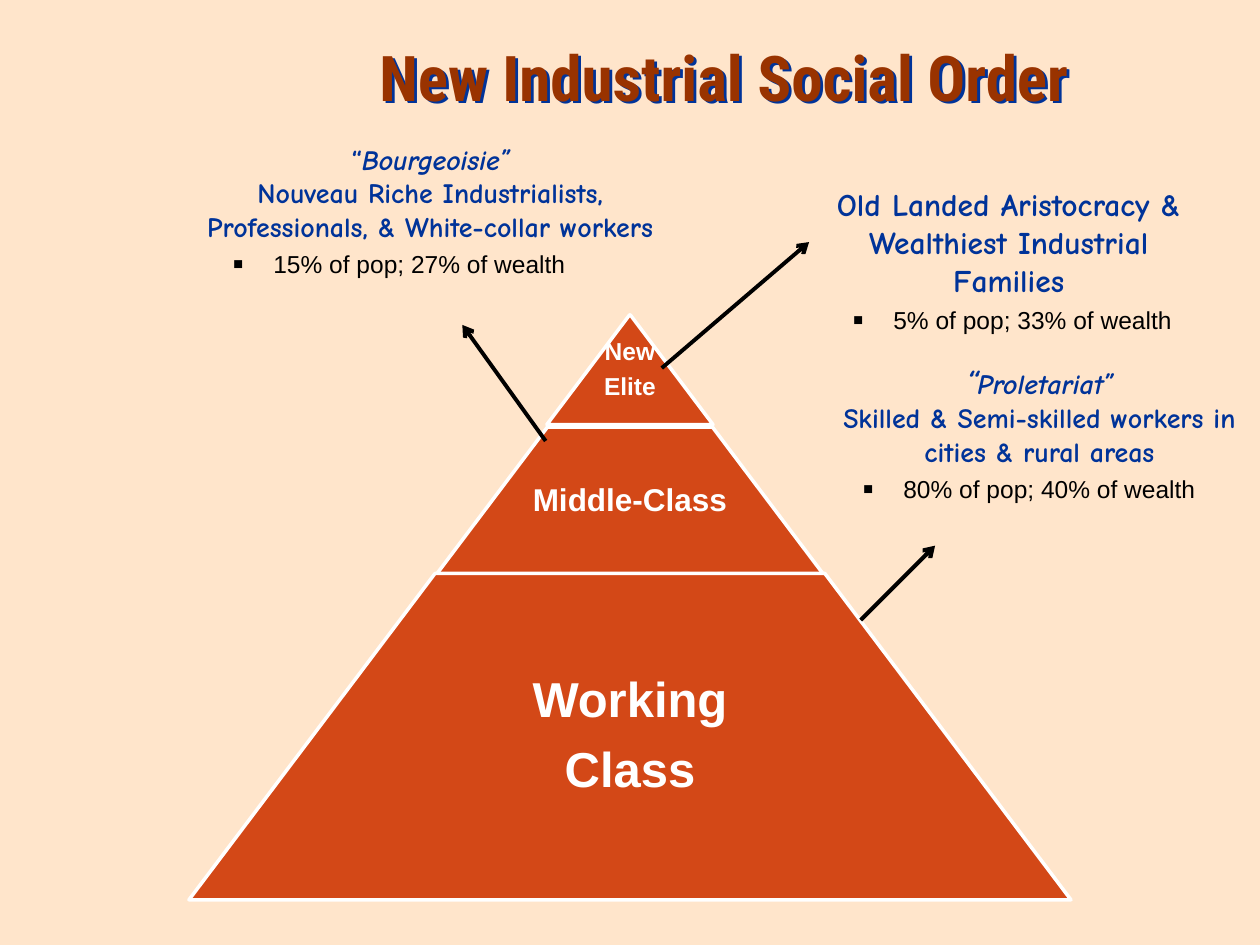
from lxml import etree
from pptx import Presentation
from pptx.dml.color import RGBColor
from pptx.enum.shapes import MSO_CONNECTOR, MSO_SHAPE
from pptx.enum.text import MSO_ANCHOR, MSO_AUTO_SIZE, PP_ALIGN
from pptx.oxml.ns import qn
from pptx.util import Cm, Pt

CENTER, LEFT = PP_ALIGN.CENTER, PP_ALIGN.LEFT
TOP, MIDDLE = MSO_ANCHOR.TOP, MSO_ANCHOR.MIDDLE
NO_FIT = MSO_AUTO_SIZE.NONE
TRAPEZOID = MSO_SHAPE.TRAPEZOID
STRAIGHT = MSO_CONNECTOR.STRAIGHT

COLORS = {
    "background": "FFE5CB",
    "title": "993300",
    "tier": "D34817",
    "white": "FFFFFF",
    "note": "003399",
    "black": "000000",
}
TITLE_FONT, NOTE_FONT, BODY_FONT = "Roboto Condensed", "Comic Neue", "Arial"
CENTER_X = 12.7

TIERS = [
    (6.35, 3.35, 2.21, 3.35, 0.05, 14, ["New", "Elite"]),
    (8.61, 7.85, 3.0, 5.11, 0.08, 18, ["Middle-Class"]),
    (11.56, 17.78, 6.58, 11.56, 0.1, 28, ["Working", "Class"]),
]

NOTES = [
    ((16.51, 7.19, 8.89, 3.84),
     [[("“", 18, True), ("Proletariat”", 16, True)],
      [("Skilled & Semi-skilled workers in cities & rural areas", 16, False)]],
     "80% of pop; 40% of wealth"),
    ((3.81, 2.74, 9.73, 3.76),
     [[("“", 16, False), ("Bourgeoisie”", 16, True)],
      [("Nouveau Riche Industrialists,", 16, False)],
      [("Professionals, & White-collar workers", 16, False)]],
     "15% of pop; 27% of wealth"),
    ((16.31, 3.61, 8.05, 3.33),
     [[("Old Landed Aristocracy & Wealthiest Industrial Families", 18, False)]],
     "5% of pop; 33% of wealth"),
]

ARROWS = [
    (13.34, 7.42, 16.31, 4.88),
    (11.0, 8.89, 9.32, 6.55),
    (17.35, 12.5, 18.85, 11.0),
]


def rgb(name):
    return RGBColor.from_string(COLORS[name])


def format_run(r, font, size, color, bold=False, italic=False):
    r.font.name = font
    r.font.size = Pt(size)
    r.font.color.rgb = rgb(color)
    r.font.bold = bold
    r.font.italic = italic


def next_paragraph(tf, index):
    return tf.add_paragraph() if index else tf.paragraphs[0]


def add_title(slide, text):
    sp = slide.shapes.title
    sp.left, sp.top, sp.width, sp.height = Cm(4.65), Cm(0.64), Cm(19.89), Cm(1.8)
    tf = sp.text_frame
    tf.text = text
    tf.auto_size = NO_FIT
    tf.vertical_anchor = TOP
    p = tf.paragraphs[0]
    p.alignment = CENTER
    format_run(p.runs[0], TITLE_FONT, 36, "title", bold=True)
    sp.fill.background()
    effects = etree.SubElement(sp.element.spPr, qn("a:effectLst"))
    shadow = etree.SubElement(effects, qn("a:outerShdw"), dist=str(Cm(0.08)),
                              dir="2700000", algn="ctr", rotWithShape="0")
    etree.SubElement(shadow, qn("a:srgbClr"), val=COLORS["note"])


def add_text_box(slide, left, top, width, height):
    sp = slide.shapes.add_textbox(Cm(left), Cm(top), Cm(width), Cm(height))
    sp.text_frame.word_wrap = True
    return sp.text_frame


def add_tier(slide, top, width, height, text_width, inset, size, lines):
    sp = slide.shapes.add_shape(TRAPEZOID, Cm(CENTER_X - width / 2), Cm(top),
                                Cm(width), Cm(height))
    sp.adjustments[0] = 0.754
    sp.shadow.inherit = False
    sp.fill.solid()
    sp.fill.fore_color.rgb = rgb("tier")
    sp.line.color.rgb = rgb("white")
    sp.line.width = Pt(2)

    tf = add_text_box(slide, CENTER_X - text_width / 2, top, text_width, height)
    tf.vertical_anchor = MIDDLE
    tf.margin_left = tf.margin_right = Cm(inset)
    tf.margin_top = tf.margin_bottom = Cm(inset)
    for i, line in enumerate(lines):
        p = next_paragraph(tf, i)
        p.text = line
        p.alignment = CENTER
        p.line_spacing = 0.9
        p.space_after = Pt(size * 0.35)
        format_run(p.runs[0], BODY_FONT, size, "white", bold=True)


def add_bullet(p):
    pPr = p._p.get_or_add_pPr()
    pPr.set("marL", str(Cm(1.45)))
    pPr.set("indent", str(-Cm(0.82)))
    etree.SubElement(pPr, qn("a:buSzPct"), val="130000")
    etree.SubElement(pPr, qn("a:buFont"), typeface=BODY_FONT)
    etree.SubElement(pPr, qn("a:buChar"), char="▪")


def add_note(slide, box, paragraphs, share):
    tf = add_text_box(slide, *box)
    for i, runs in enumerate(paragraphs):
        p = next_paragraph(tf, i)
        p.alignment = CENTER
        for text, size, italic in runs:
            r = p.add_run()
            r.text = text
            format_run(r, NOTE_FONT, size, "note", bold=True, italic=italic)
    p = tf.add_paragraph()
    p.text = share
    p.alignment = LEFT
    p.space_before = Pt(3.6)
    add_bullet(p)
    format_run(p.runs[0], BODY_FONT, 14, "black")


def add_arrow(slide, x1, y1, x2, y2):
    line = slide.shapes.add_connector(STRAIGHT, Cm(x1), Cm(y1), Cm(x2), Cm(y2))
    line.line.color.rgb = rgb("black")
    line.line.width = Pt(2.25)
    etree.SubElement(line.line._get_or_add_ln(), qn("a:tailEnd"), type="arrow")
    etree.SubElement(line._element.spPr, qn("a:effectLst"))


def main():
    prs = Presentation()
    prs.slide_width, prs.slide_height = Cm(25.4), Cm(19.05)
    slide = prs.slides.add_slide(prs.slide_layouts[5])
    slide.background.fill.solid()
    slide.background.fill.fore_color.rgb = rgb("background")
    add_title(slide, "New Industrial Social Order")
    for tier in TIERS:
        add_tier(slide, *tier)
    for arrow in ARROWS:
        add_arrow(slide, *arrow)
    for note in NOTES:
        add_note(slide, *note)
    prs.save("out.pptx")


if __name__ == "__main__":
    main()
